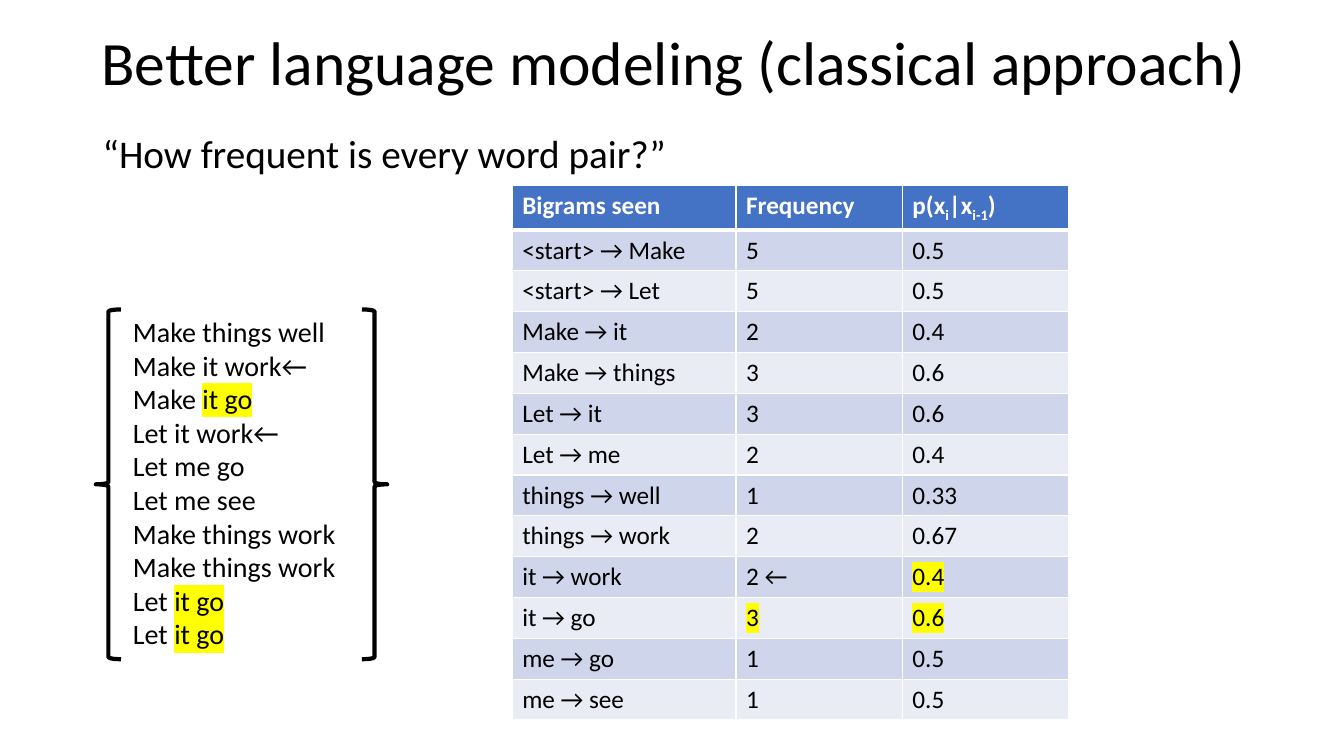
from lxml.etree import SubElement
from pptx import Presentation
from pptx.dml.color import RGBColor
from pptx.enum.shapes import MSO_SHAPE as SHAPE
from pptx.enum.text import MSO_ANCHOR as ANCHOR, PP_ALIGN as ALIGN
from pptx.oxml.ns import qn
from pptx.util import Pt

PX = 9144
FONT = "Calibri"
BLACK, WHITE, YELLOW = "000000", "FFFFFF", "FFFF00"
HEADER, BANDS = "4472C4", ("CFD5EA", "E9EBF5")
MARK, SUB = "mark", "sub"

SENTENCES = [
    ["Make things well"],
    ["Make it work←"],
    ["Make ", ("it go", MARK)],
    ["Let it work←"],
    ["Let me go"],
    ["Let me see"],
    ["Make things work"],
    ["Make things work"],
    ["Let ", ("it go", MARK)],
    ["Let ", ("it go", MARK)],
]
BIGRAMS = [
    [["Bigrams seen"], ["Frequency"],
     ["p(x", ("i", SUB), "|x", ("i-1", SUB), ")"]],
    [["<start> → Make"], ["5"], ["0.5"]],
    [["<start> → Let"], ["5"], ["0.5"]],
    [["Make → it"], ["2"], ["0.4"]],
    [["Make → things"], ["3"], ["0.6"]],
    [["Let → it"], ["3"], ["0.6"]],
    [["Let → me"], ["2"], ["0.4"]],
    [["things → well"], ["1"], ["0.33"]],
    [["things → work"], ["2"], ["0.67"]],
    [["it → work"], ["2 ←"], [("0.4", MARK)]],
    [["it → go"], [("3", MARK)], [("0.6", MARK)]],
    [["me → go"], ["1"], ["0.5"]],
    [["me → see"], ["1"], ["0.5"]],
]


def px(*lengths):
    """Turn pixel lengths into EMU."""
    return [round(n * PX) for n in lengths]


def rgb(color):
    """Turn a hex string into a colour."""
    return RGBColor.from_string(color)


def write(p, runs, size, color=BLACK, bold=False):
    """Add runs, each plain text or a (text, style) pair, to a paragraph."""
    for run in runs:
        text, style = (run, None) if isinstance(run, str) else run
        r = p.add_run()
        r.text = text
        r.font.size, r.font.bold = Pt(size), bold
        r.font.color.rgb = rgb(color)
        rPr = r.font._element
        if style == MARK:
            SubElement(SubElement(rPr, qn("a:highlight")),
                       qn("a:srgbClr"), val=YELLOW)
        elif style == SUB:
            rPr.set("baseline", "-25000")
        r.font.name = FONT


def text_frame(s, box, wrap=True):
    """Add a text box and return its frame."""
    tf = s.shapes.add_textbox(*px(*box)).text_frame
    tf.word_wrap = wrap
    return tf


def title(s, box):
    """Place the centred slide title."""
    tf = text_frame(s, box)
    tf.vertical_anchor = ANCHOR.MIDDLE
    p = tf.paragraphs[0]
    p.alignment, p.line_spacing = ALIGN.CENTER, 0.9
    write(p, ["Better language modeling (classical approach)"], 44)


def question(s, box):
    """Place the question below the title."""
    p = text_frame(s, box).paragraphs[0]
    p.line_spacing, p.space_before = 0.9, Pt(10)
    write(p, ["“How frequent is every word pair?”"], 28)


def corpus(s, box):
    """Place the sentences between a pair of braces."""
    x, y, w, h = box
    brace_w, inset = 25, 27
    tf = text_frame(s, (x + inset, y, w - 2 * inset - 12, h), wrap=False)
    for i, runs in enumerate(SENTENCES):
        p = tf.add_paragraph() if i else tf.paragraphs[0]
        write(p, runs, 20)
    for left, flip in ((x + w - brace_w, False), (x, True)):
        sp = s.shapes.add_shape(SHAPE.RIGHT_BRACE, *px(left, y, brace_w, h))
        sp.shadow.inherit = False
        sp.fill.background()
        sp.line.color.rgb, sp.line.width = rgb(BLACK), Pt(3)
        if flip:
            sp._element.spPr.xfrm.set("flipH", "1")


def borders(cell, bottom):
    """Give a cell white borders, with its own bottom width in points."""
    tcPr = cell._tc.get_or_add_tcPr()
    for side, width in (("L", 1), ("R", 1), ("T", 1), ("B", bottom)):
        ln = SubElement(tcPr, qn(f"a:ln{side}"), w=str(Pt(width)))
        SubElement(SubElement(ln, qn("a:solidFill")),
                   qn("a:srgbClr"), val=WHITE)


def bigram_table(s, box):
    """Place the table of bigram counts and probabilities."""
    widths = px(222, 165, 165)
    table = s.shapes.add_table(len(BIGRAMS), len(widths), *px(*box)).table
    for column, width in zip(table.columns, widths):
        column.width = width
    for i, row in enumerate(BIGRAMS):
        head = i == 0
        for j, runs in enumerate(row):
            cell = table.cell(i, j)
            borders(cell, 3 if head else 1)
            cell.fill.solid()
            cell.fill.fore_color.rgb = rgb(HEADER if head else BANDS[(i - 1) % 2])
            write(cell.text_frame.paragraphs[0], runs, 18,
                  WHITE if head else BLACK, head)


def main():
    """Build the slide and save it."""
    prs = Presentation()
    prs.slide_width, prs.slide_height = px(1333, 750)
    s = prs.slides.add_slide(prs.slide_layouts[6])
    title(s, (2, 2, 1333, 127))
    question(s, (92, 129, 1150, 579))
    corpus(s, (95, 307, 289, 347))
    bigram_table(s, (508, 184, 552, 527))
    prs.save("out.pptx")


if __name__ == "__main__":
    main()
